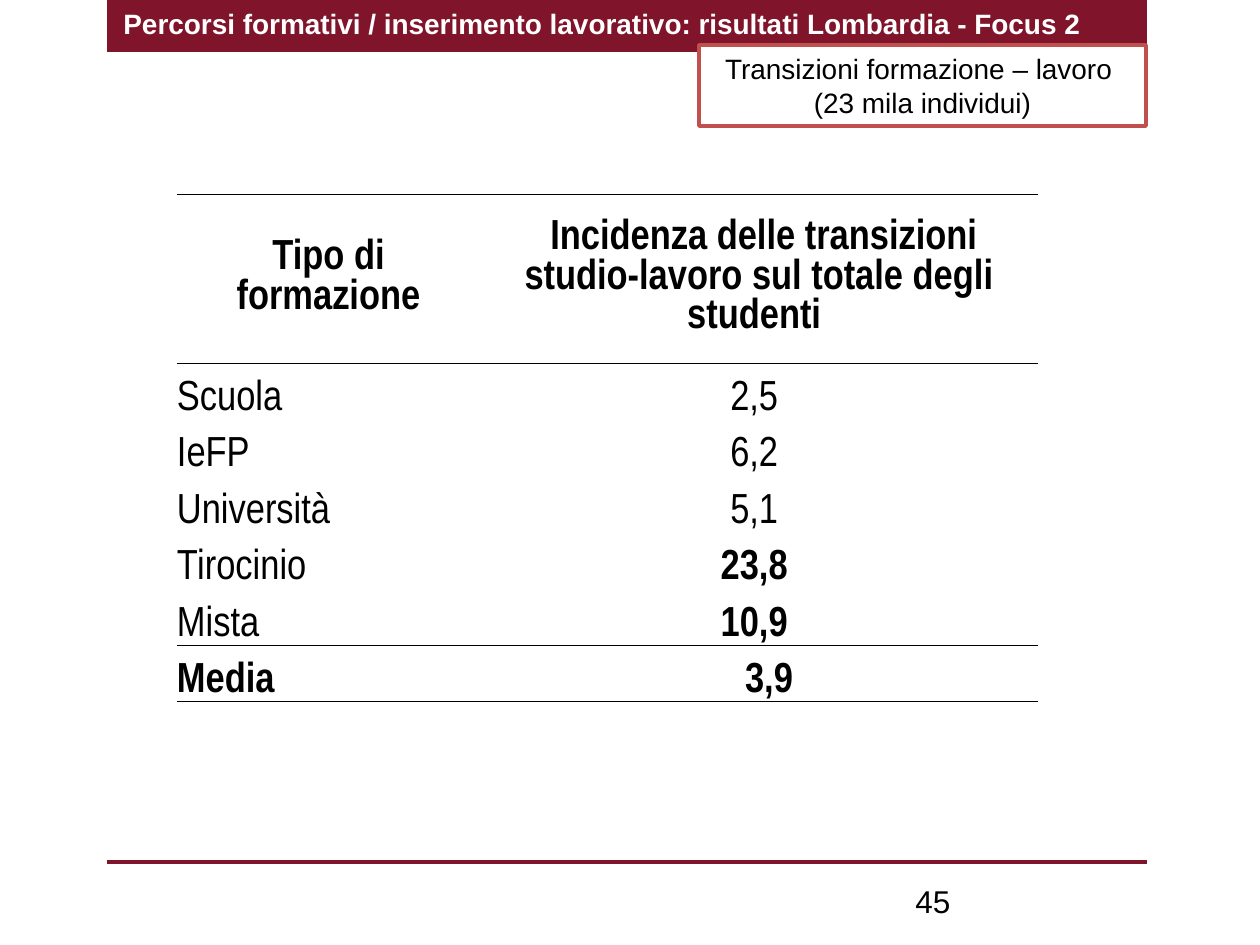
import dataclasses

import lxml.etree
import pptx
import pptx.dml.color
import pptx.enum.shapes
import pptx.enum.text
import pptx.oxml.ns
import pptx.util

ALIGN = pptx.enum.text.PP_ALIGN
ANCHOR = pptx.enum.text.MSO_ANCHOR
QN = pptx.oxml.ns.qn
EMU_PER_PX = 914400 / 126


def emu(px):
    return pptx.util.Emu(round(px * EMU_PER_PX))


def rgb(value):
    return pptx.dml.color.RGBColor.from_string(value)


def apply(target, values):
    for name, value in values.items():
        setattr(target, name, value)


@dataclasses.dataclass(frozen=True)
class Theme:
    wine: str = "7F142A"
    red: str = "C0504D"
    black: str = "000000"
    white: str = "FFFFFF"
    font: str = "Arial"
    table_font: str = "Arial Narrow"
    heading_size: int = 16
    number_size: int = 18
    table_size: int = 24
    line_width: int = 2
    rule_width: float = 0.5


class SlideBuilder:
    def __init__(self, theme, slide):
        self.theme = theme
        self.slide = slide

    def fill_text(self, frame, lines, size, color=None, font=None, bold=False, align=ALIGN.LEFT):
        frame.word_wrap = True
        for index, line in enumerate(lines):
            para = frame.paragraphs[0] if index == 0 else frame.add_paragraph()
            para.alignment = align
            span = para.add_run()
            span.text = line
            apply(span.font, {
                "name": font or self.theme.font,
                "size": pptx.util.Pt(size),
                "bold": bold,
            })
            span.font.color.rgb = rgb(color or self.theme.black)

    def text(self, bounds, line, size, **style):
        box = self.slide.shapes.add_textbox(*map(emu, bounds))
        self.fill_text(box.text_frame, [line], size, **style)

    def rectangle(self, bounds, fill, line=None):
        kind = pptx.enum.shapes.MSO_SHAPE.RECTANGLE
        box = self.slide.shapes.add_shape(kind, *map(emu, bounds))
        box.shadow.inherit = False
        box.fill.solid()
        box.fill.fore_color.rgb = rgb(fill)
        if line:
            box.line.color.rgb = rgb(line)
            box.line.width = pptx.util.Pt(self.theme.line_width)
        else:
            box.line.fill.background()
        return box

    def callout(self, bounds, lines):
        box = self.rectangle(bounds, self.theme.white, self.theme.red)
        box.text_frame.vertical_anchor = ANCHOR.MIDDLE
        self.fill_text(box.text_frame, lines, self.theme.heading_size, align=ALIGN.CENTER)

    def line(self, start, end):
        kind = pptx.enum.shapes.MSO_CONNECTOR.STRAIGHT
        rule = self.slide.shapes.add_connector(kind, *map(emu, start + end))
        rule.line.color.rgb = rgb(self.theme.wine)
        rule.line.width = pptx.util.Pt(self.theme.line_width)
        lxml.etree.SubElement(rule._element.spPr, QN("a:effectLst"))

    def borders(self, cell, ruled_sides):
        properties = cell._tc.get_or_add_tcPr()
        width = str(pptx.util.Pt(self.theme.rule_width))
        for side in "LRTB":
            edge = lxml.etree.SubElement(properties, QN(f"a:ln{side}"), w=width)
            if side in ruled_sides:
                fill = lxml.etree.SubElement(edge, QN("a:solidFill"))
                lxml.etree.SubElement(fill, QN("a:srgbClr"), val=self.theme.black)
            else:
                lxml.etree.SubElement(edge, QN("a:noFill"))

    def table(self, bounds, columns, header_height, rows, bold_cells, rules, indents):
        frame = self.slide.shapes.add_table(len(rows), len(columns), *map(emu, bounds))
        grid = frame.table
        apply(grid, {"first_row": False, "horz_banding": False})
        for column, width in zip(grid.columns, columns):
            column.width = emu(width)
        body_height = (bounds[3] - header_height) / (len(rows) - 1)
        for r, values in enumerate(rows):
            grid.rows[r].height = emu(body_height if r else header_height)
            sides = ("T" if r in rules else "") + ("B" if r + 1 in rules else "")
            for c, value in enumerate(values):
                cell = grid.cell(r, c)
                apply(cell, {
                    "margin_left": emu(indents.get((r, c), 0)),
                    "margin_right": 0,
                    "margin_top": 0,
                    "margin_bottom": 0,
                    "vertical_anchor": ANCHOR.BOTTOM if r else ANCHOR.MIDDLE,
                })
                self.borders(cell, sides)
                cell.fill.background()
                if value:
                    self.fill_text(
                        cell.text_frame, [value], self.theme.table_size,
                        font=self.theme.table_font, bold=(r, c) in bold_cells,
                        align=ALIGN.CENTER if c or not r else ALIGN.LEFT,
                    )


def main():
    deck = pptx.Presentation()
    apply(deck, {"slide_width": emu(1260), "slide_height": emu(945)})
    theme = Theme()
    page = SlideBuilder(theme, deck.slides.add_slide(deck.slide_layouts[6]))

    page.rectangle((107, 0, 1040, 52), theme.wine)
    page.line((107, 862), (1147, 862))
    page.text((903, 876, 294, 50), "45", theme.number_size)

    rows = [
        ("Tipo di formazione",
         " Incidenza delle transizioni studio-lavoro sul totale degli studenti "),
        ("Scuola", "2,5 "),
        ("IeFP", "6,2 "),
        ("Università", "5,1 "),
        ("Tirocinio", "23,8 "),
        ("Mista", "10,9 "),
        ("Media", "3,9"),
        ("", ""),
    ]
    page.table(
        (177, 194, 861, 564), (303, 558), 169, rows,
        bold_cells={(0, 0), (0, 1), (4, 1), (5, 1), (6, 0), (6, 1)},
        rules={0, 1, 6, 7},
        indents={(6, 1): 20},
    )

    page.text(
        (111, 0, 1050, 47),
        "Percorsi formativi / inserimento lavorativo: risultati Lombardia - Focus 2",
        theme.heading_size, color=theme.white, bold=True,
    )
    page.callout(
        (699, 45, 447, 81),
        ["Transizioni formazione – lavoro ", "(23 mila individui)"],
    )
    deck.save("out.pptx")


if __name__ == "__main__":
    main()
